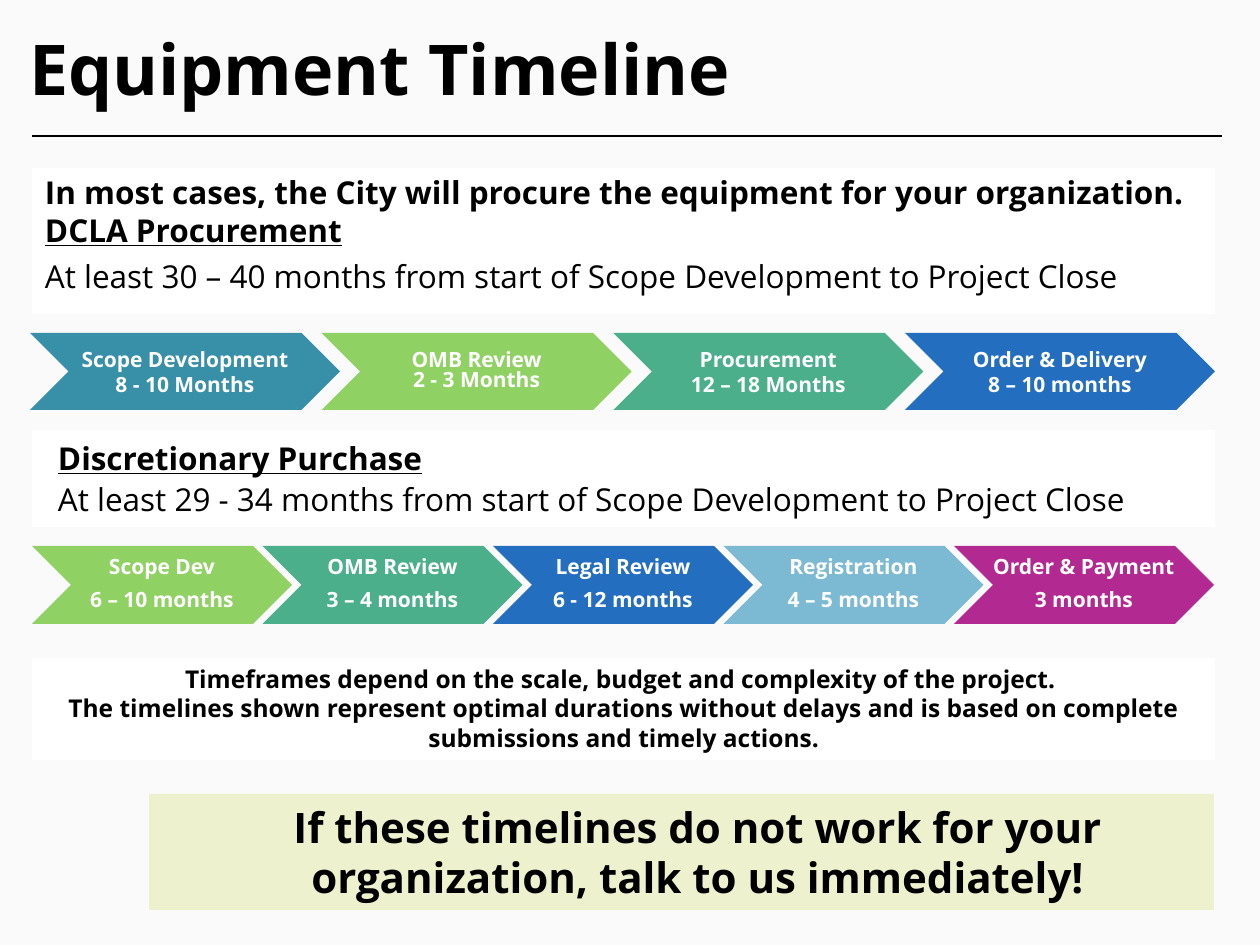
from lxml import etree
from pptx import Presentation
from pptx.dml.color import RGBColor
from pptx.enum.shapes import MSO_CONNECTOR, MSO_SHAPE
from pptx.enum.text import MSO_ANCHOR, PP_ALIGN
from pptx.oxml.ns import qn
from pptx.util import Emu, Pt

RECT, CHEVRON = MSO_SHAPE.RECTANGLE, MSO_SHAPE.CHEVRON
LINE = MSO_CONNECTOR.STRAIGHT
TOP, MIDDLE = MSO_ANCHOR.TOP, MSO_ANCHOR.MIDDLE
LEFT, CENTER = PP_ALIGN.LEFT, PP_ALIGN.CENTER
FONT = "Open Sans"
BLACK, WHITE = "000000", "FFFFFF"


def px(n):
    return Emu(round(n * 914400 / 126))


def rgb(color):
    return RGBColor.from_string(color)


def style(p, size, color=BLACK, bold=True, align=LEFT):
    p.alignment = align
    p.font.name, p.font.size, p.font.bold = FONT, Pt(size), bold
    p.font.color.rgb = rgb(color)


def set_margins(tf, left, top, right, bottom):
    tf.margin_left, tf.margin_top = px(left), px(top)
    tf.margin_right, tf.margin_bottom = px(right), px(bottom)


def add_block(s, kind, box, fill):
    sp = s.shapes.add_shape(kind, *map(px, box))
    sp.shadow.inherit = False
    sp.fill.solid()
    sp.fill.fore_color.rgb = rgb(fill)
    sp.line.fill.background()
    return sp


def add_title(s, box, text):
    x, y, w, h = box
    sp = s.shapes.title
    sp.left, sp.top, sp.width, sp.height = map(px, box)
    tf = sp.text_frame
    tf.text = text
    tf.vertical_anchor = MIDDLE
    set_margins(tf, 29, 6, 13, 6)
    style(tf.paragraphs[0], 40)
    rule = s.shapes.add_connector(LINE, px(x + 32), px(y + h + 1), px(x + 1222), px(y + h + 1))
    rule.line.color.rgb = rgb(BLACK)
    rule.line.width = Pt(0.75)
    etree.SubElement(rule._element.spPr, qn("a:effectLst"))


def add_panel(s, box, paragraphs, size, margins, fill=WHITE, align=LEFT,
              anchor=TOP, spacing=None, after=0):
    sp = add_block(s, RECT, box, fill)
    tf = sp.text_frame
    tf.word_wrap = True
    tf.vertical_anchor = anchor
    set_margins(tf, *margins)
    for i, runs in enumerate(paragraphs):
        p = tf.paragraphs[0] if i == 0 else tf.add_paragraph()
        style(p, size, align=align)
        p.line_spacing = spacing
        p.space_after = Pt(after)
        for text, bold, underline in runs:
            r = p.add_run()
            r.text = text
            r.font.bold, r.font.underline = bold, underline
    return sp


def add_steps(s, box, step_w, steps, before=0):
    x, y, w, h = box
    pitch = (w - step_w) / (len(steps) - 1)
    for i, (name, duration, fill, spacing) in enumerate(steps):
        sp = add_block(s, CHEVRON, (x + i * pitch, y, step_w, h), fill)
        tf = sp.text_frame
        tf.word_wrap = False
        tf.vertical_anchor = MIDDLE
        tf.text = f"{name}\n{duration}"
        for p in tf.paragraphs:
            style(p, 12, WHITE, align=CENTER)
            p.line_spacing = spacing
        tf.paragraphs[1].space_before = Pt(before)


def add_callout(s, box, text):
    sp = add_panel(s, box, [[(text, True, False)]], 24, (45, 6, 13, 6),
                   "EAEEBA", CENTER, MIDDLE)
    color = sp._element.spPr.find(qn("a:solidFill"))[0]
    etree.SubElement(color, qn("a:alpha"), val="70000")


def main():
    prs = Presentation()
    prs.slide_width, prs.slide_height = px(1260), px(945)
    s = prs.slides.add_slide(prs.slide_layouts[5])
    s.background.fill.solid()
    s.background.fill.fore_color.rgb = rgb("FAFAFA")

    add_title(s, (0, 0, 1260, 135), "Equipment Timeline")
    add_panel(s, (32, 168, 1183, 146), [
        [("In most cases, the City will procure the equipment for your organization. ", True, False),
         ("DCLA Procurement", True, True)],
        [("At least 30 – 40 months from start of Scope Development to Project Close", False, False)],
    ], 18, (13, 5, 0, 5), after=4.5)
    add_steps(s, (30, 333, 1185, 77), 310, [
        ("Scope Development", "8 - 10 Months", "3890A8", 1.0),
        ("OMB Review", "2 - 3 Months", "90D164", 0.8),
        ("Procurement", "12 – 18 Months", "4AAF8A", 1.0),
        ("Order & Delivery", "8 – 10 months", "236EBE", 1.0),
    ])
    add_panel(s, (32, 430, 1183, 97), [
        [("Discretionary Purchase", True, True)],
        [("At least 29 - 34 months from start of Scope Development to Project Close", False, False)],
    ], 18, (26, 5, 9, 5), spacing=1.1)
    add_steps(s, (32, 546, 1182, 78), 260, [
        ("Scope Dev", "6 – 10 months", "90D164", 0.8),
        ("OMB Review", "3 – 4 months", "4AAF8A", 0.8),
        ("Legal Review", "6 - 12 months", "236EBE", 0.8),
        ("Registration", "4 – 5 months", "7CBAD3", 0.8),
        ("Order & Payment", "3 months", "B22A91", 0.8),
    ], before=6.8)
    add_panel(s, (32, 658, 1183, 102), [
        [("Timeframes depend on the scale, budget and complexity of the project. ", True, False)],
        [("The timelines shown represent optimal durations without delays and is based on "
          "complete submissions and timely actions.", True, False)],
    ], 14, (14, 6, 13, 6), align=CENTER)
    add_callout(s, (149, 794, 1065, 116),
                "If these timelines do not work for your organization, talk to us immediately!")
    prs.save("out.pptx")


if __name__ == "__main__":
    main()
